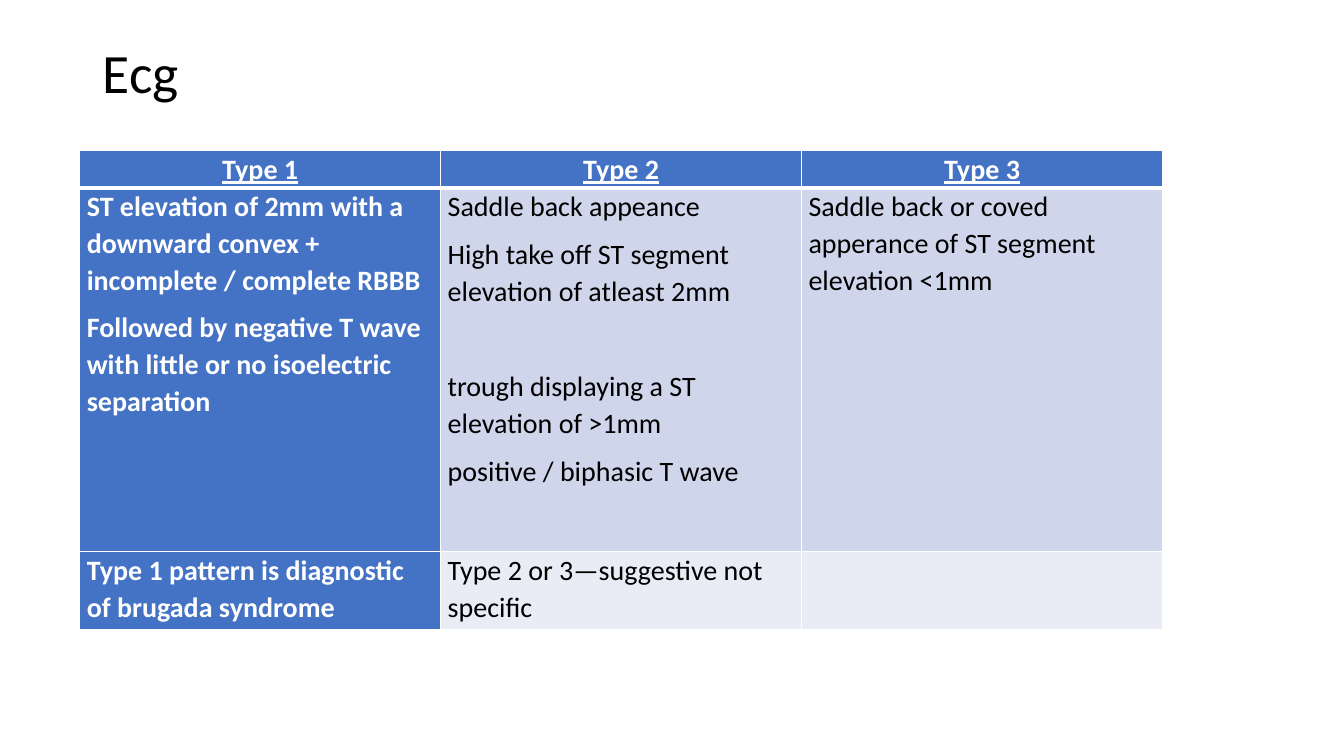
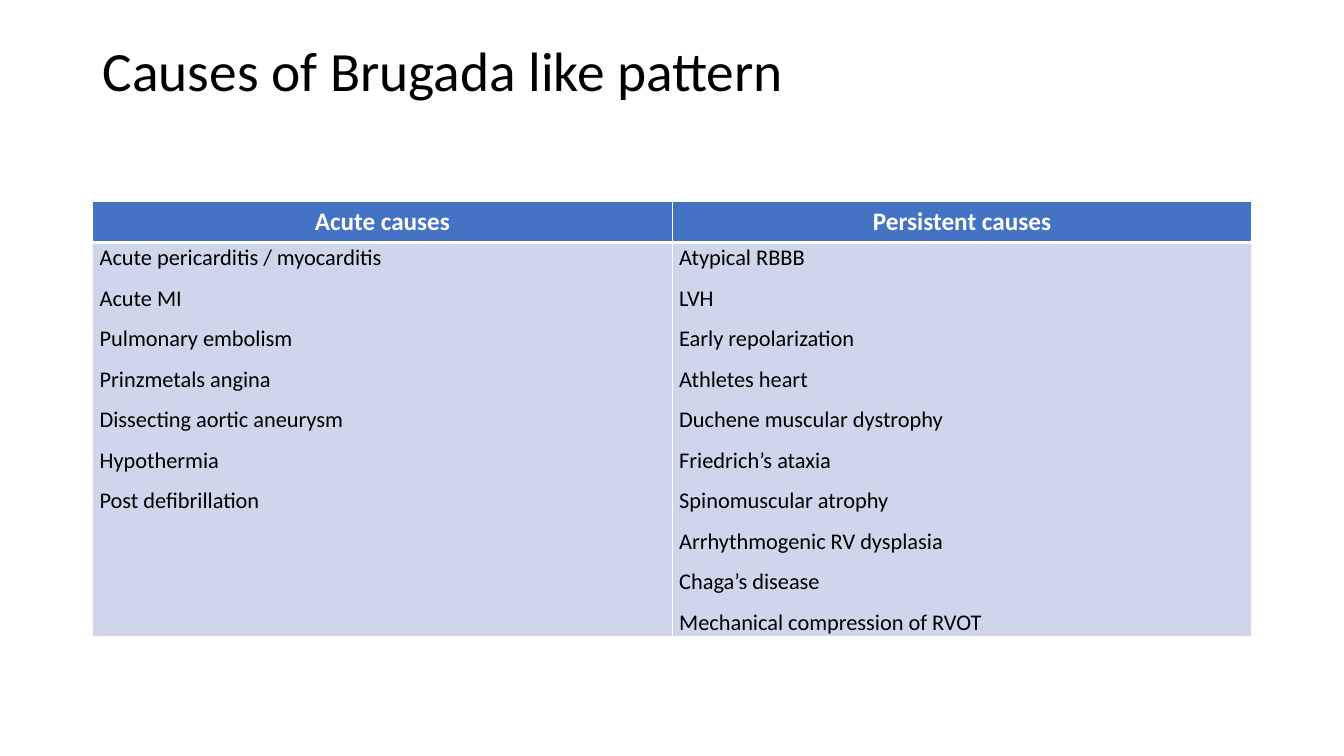
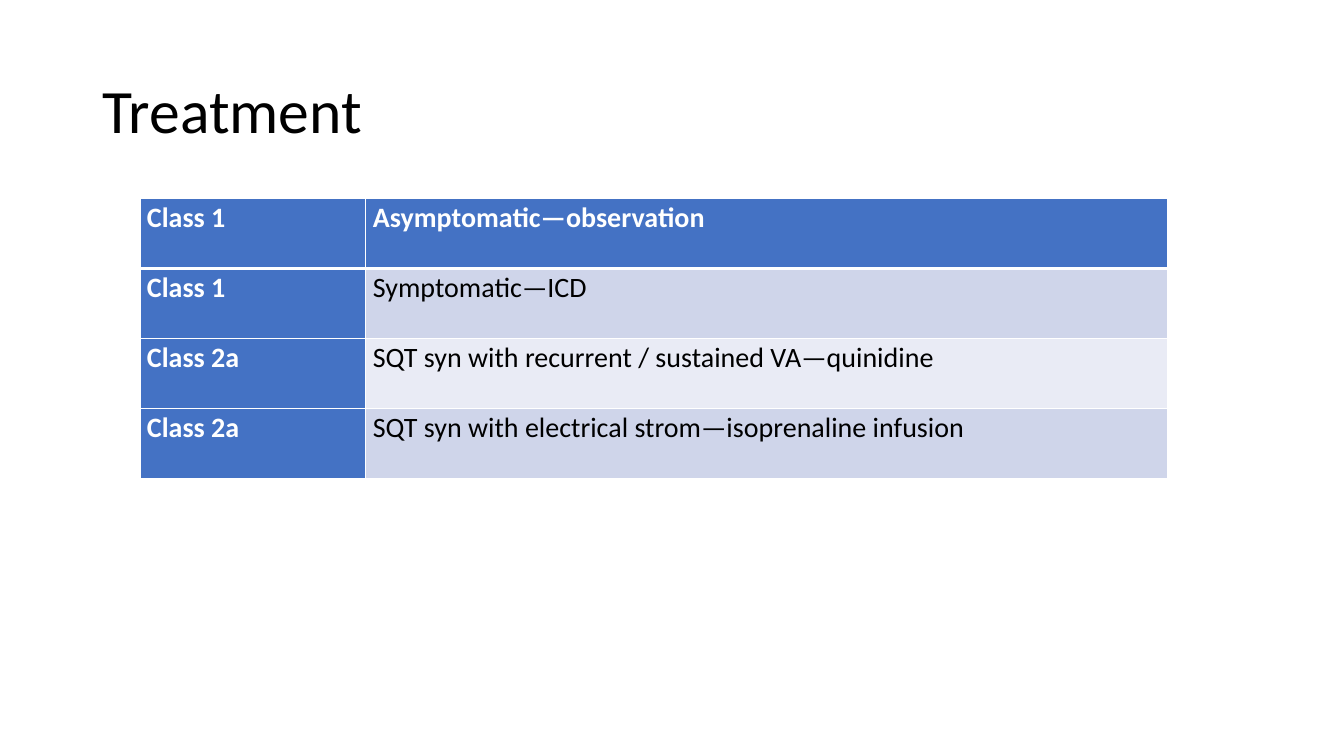
from dataclasses import dataclass, field

from lxml import etree
from pptx import Presentation
from pptx.dml.color import RGBColor
from pptx.enum.text import MSO_ANCHOR, MSO_AUTO_SIZE, PP_ALIGN
from pptx.oxml.ns import qn
from pptx.util import Pt

LEFT, CENTER = PP_ALIGN.LEFT, PP_ALIGN.CENTER
MIDDLE = MSO_ANCHOR.MIDDLE
NO_AUTOFIT = MSO_AUTO_SIZE.NONE
TITLE_ONLY = 5

FONT = "Calibri"
COLORS = {
    "accent": "4472C4",
    "band": "CFD5EA",
    "pale": "E9EBF5",
    "light": "FFFFFF",
    "dark": "000000",
}
TITLE_LEFT, TITLE_TOP, TITLE_WIDTH = 66.2, 28.8, 828
THIN, THICK = 1, 3
LINE_SPACING, SPACE_AFTER = 1.07, 8


@dataclass(frozen=True)
class TableSlide:
    title: str
    title_size: float
    title_height: float
    left: float
    top: float
    widths: list[float]
    heights: list[float]
    rows: list[list[str]]
    header_size: float = 20
    body_size: float = 20
    header_align: PP_ALIGN = CENTER
    header_underline: bool = False
    header_roomy: bool = False
    header_column: bool = True
    gaps: dict[tuple[int, int, int], float] = field(default_factory=dict)


SLIDES = [
    TableSlide(
        title="Ecg", title_size=39.6, title_height=50.4,
        left=57, top=107.5, widths=[257.8] * 3, heights=[26.6, 260, 55.4],
        header_underline=True,
        gaps={(1, 1, 2): 34},
        rows=[
            ["Type 1", "Type 2", "Type 3"],
            [
                "ST elevation of 2mm with a downward convex + incomplete / complete RBBB\n"
                "Followed by negative T wave with little or no isoelectric separation",
                "Saddle back appeance\n"
                "High take off ST segment elevation of atleast 2mm\n"
                "trough displaying a ST elevation of >1mm\n"
                "positive / biphasic T wave",
                "Saddle back or coved apperance of ST segment elevation <1mm",
            ],
            [
                "Type 1 pattern is diagnostic of brugada syndrome",
                "Type 2 or 3—suggestive not specific",
                "",
            ],
        ],
    ),
    TableSlide(
        title="Causes of Brugada like pattern", title_size=39.6, title_height=46.8,
        left=66.2, top=144, widths=[414] * 2, heights=[29.2, 276.8],
        header_size=18, body_size=16, header_roomy=True, header_column=False,
        rows=[
            ["Acute causes", "Persistent causes"],
            [
                "Acute pericarditis / myocarditis\nAcute MI\nPulmonary embolism\n"
                "Prinzmetals angina\nDissecting aortic aneurysm\nHypothermia\n"
                "Post defibrillation",
                "Atypical RBBB\nLVH\nEarly repolarization\nAthletes heart\n"
                "Duchene muscular dystrophy\nFriedrich’s ataxia\n"
                "Spinomuscular atrophy\nArrhythmogenic RV dysplasia\n"
                "Chaga’s disease\nMechanical compression of RVOT",
            ],
        ],
    ),
    TableSlide(
        title="Treatment", title_size=44, title_height=104.4,
        left=100, top=141.8, widths=[161.3, 572.4], heights=[50] * 4,
        header_align=LEFT,
        rows=[
            ["Class 1", "Asymptomatic—observation"],
            ["Class 1", "Symptomatic—ICD"],
            ["Class 2a", "SQT syn with recurrent / sustained VA—quinidine"],
            ["Class 2a", "SQT syn with electrical strom—isoprenaline infusion"],
        ],
    ),
]


def rgb(name: str) -> RGBColor:
    return RGBColor.from_string(COLORS[name])


def format_runs(p, size: float, color: str, bold: bool = False, underline: bool = False) -> None:
    for r in p.runs:
        r.font.name = FONT
        r.font.size = Pt(size)
        r.font.bold = bold
        r.font.underline = underline
        r.font.color.rgb = rgb(color)


def set_borders(cell, top: float, bottom: float) -> None:
    tc_pr = cell._tc.get_or_add_tcPr()
    edges = {"lnL": THIN, "lnR": THIN, "lnT": top, "lnB": bottom}
    for i, (tag, width) in enumerate(edges.items()):
        ln = etree.Element(qn(f"a:{tag}"), w=str(Pt(width)))
        fill = etree.SubElement(ln, qn("a:solidFill"))
        etree.SubElement(fill, qn("a:srgbClr"), val=COLORS["light"])
        tc_pr.insert(i, ln)


def add_title(slide, spec_slide: TableSlide) -> None:
    sp = slide.shapes.title
    sp.left, sp.top = Pt(TITLE_LEFT), Pt(TITLE_TOP)
    sp.width, sp.height = Pt(TITLE_WIDTH), Pt(spec_slide.title_height)
    tf = sp.text_frame
    tf.text = spec_slide.title
    tf.word_wrap = True
    tf.auto_size = NO_AUTOFIT
    tf.vertical_anchor = MIDDLE
    p = tf.paragraphs[0]
    p.alignment = LEFT
    p.line_spacing = 0.9
    format_runs(p, spec_slide.title_size, "dark")


def fill_cell(cell, data: TableSlide, row: int, col: int) -> None:
    header = row == 0
    strong = header or (data.header_column and col == 0)
    roomy = header and data.header_roomy
    cell.fill.solid()
    cell.fill.fore_color.rgb = rgb("accent" if strong else "band" if row % 2 else "pale")
    set_borders(cell, THICK if row == 1 else THIN, THICK if header else THIN)
    cell.margin_left = cell.margin_right = Pt(7.2 if roomy else 5)
    cell.margin_top = cell.margin_bottom = Pt(3.6 if roomy else 0)
    tf = cell.text_frame
    tf.text = data.rows[row][col]
    for i, p in enumerate(tf.paragraphs):
        p.alignment = data.header_align if header else LEFT
        if not roomy:
            p.line_spacing = LINE_SPACING
            p.space_after = Pt(SPACE_AFTER)
        p.space_before = Pt(data.gaps.get((row, col, i), 0))
        format_runs(
            p,
            data.header_size if header else data.body_size,
            "light" if strong else "dark",
            bold=strong,
            underline=header and data.header_underline,
        )


def add_table(slide, data: TableSlide) -> None:
    table = slide.shapes.add_table(
        len(data.heights), len(data.widths), Pt(data.left), Pt(data.top),
        Pt(sum(data.widths)), Pt(sum(data.heights)),
    ).table
    table.first_col = data.header_column
    for column, width in zip(table.columns, data.widths):
        column.width = Pt(width)
    for row, height in enumerate(data.heights):
        table.rows[row].height = Pt(height)
        for col in range(len(data.widths)):
            fill_cell(table.cell(row, col), data, row, col)


def main() -> None:
    prs = Presentation()
    prs.slide_width, prs.slide_height = Pt(960), Pt(540)
    for data in SLIDES:
        slide = prs.slides.add_slide(prs.slide_layouts[TITLE_ONLY])
        add_title(slide, data)
        add_table(slide, data)
    prs.save("out.pptx")


if __name__ == "__main__":
    main()
